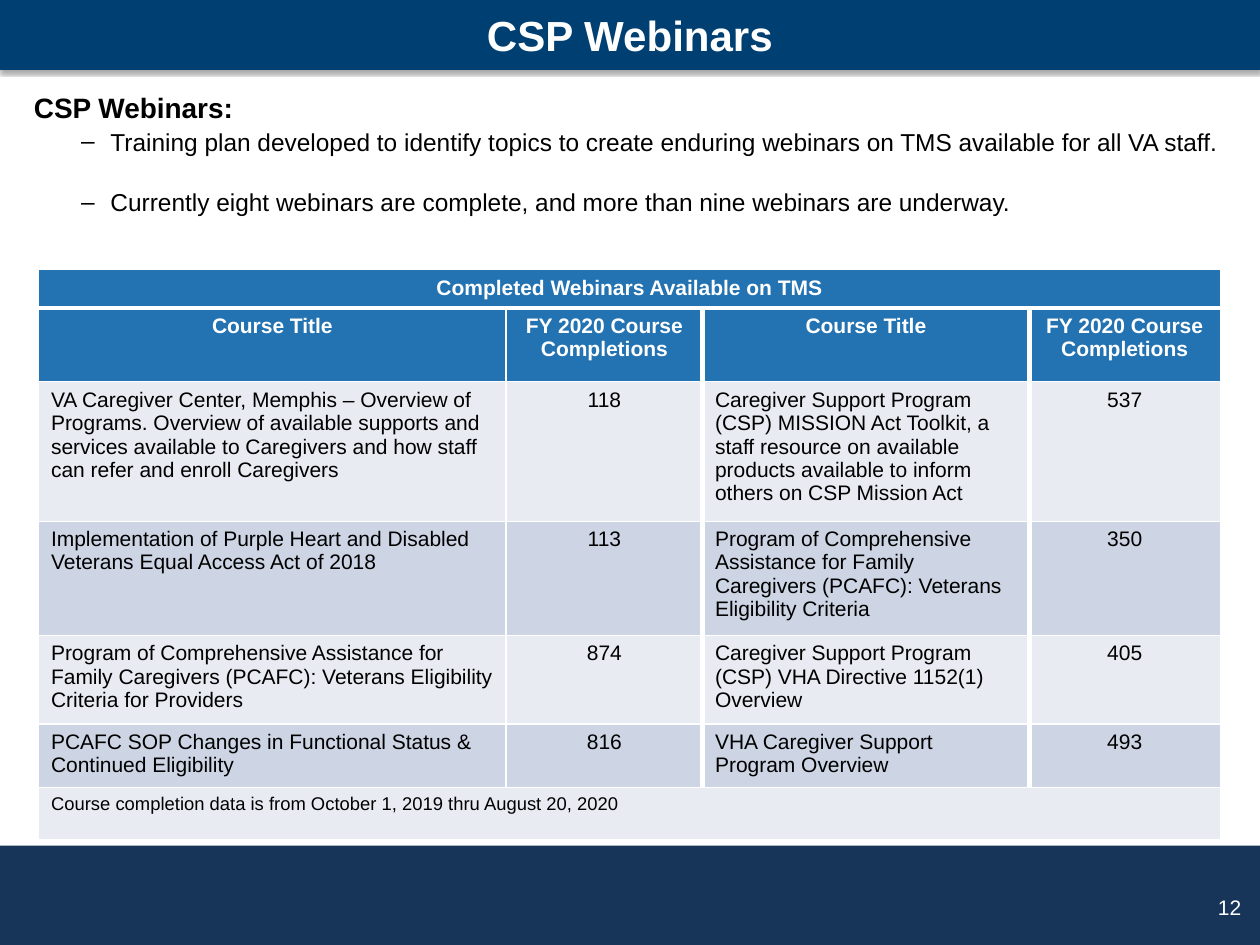
"""Build the CSP Webinars slide with its table of course completions."""
import pptx
import pptx.util
import pptx.dml.color
import pptx.enum.shapes
import pptx.enum.text
import pptx.oxml
import pptx.oxml.ns

TITLE = "CSP Webinars"
HEAD = "CSP Webinars:"
POINTS = [
    ("Training plan developed to identify topics to create enduring webinars on TMS available for all VA staff.", 2),
    ("Currently eight webinars are complete, and more than nine webinars are underway.", 23.5),
]
PAGE = "12"
ROWS = [
    ["Completed Webinars Available on TMS"],
    ["Course Title", "FY 2020 Course Completions"] * 2,
    ["VA Caregiver Center, Memphis – Overview of Programs. Overview of available supports and services "
     "available to Caregivers and how staff can refer and enroll Caregivers", "118",
     "Caregiver Support Program (CSP) MISSION Act Toolkit, a staff resource on available products "
     "available to inform others on CSP Mission Act", "537"],
    ["Implementation of Purple Heart and Disabled Veterans Equal Access Act of 2018", "113",
     "Program of Comprehensive Assistance for Family Caregivers (PCAFC): Veterans Eligibility Criteria", "350"],
    ["Program of Comprehensive Assistance for Family Caregivers (PCAFC): Veterans Eligibility Criteria "
     "for Providers", "874",
     "Caregiver Support Program (CSP) VHA Directive 1152(1) Overview", "405"],
    ["PCAFC SOP Changes in Functional Status & Continued Eligibility", "816",
     "VHA Caregiver Support Program Overview", "493"],
    ["Course completion data is from October 1, 2019 thru August 20, 2020"],
]
WIDTHS = [4.94, 2.08, 3.45, 2.02]
HEIGHTS = [0.39, 0.78, 1.44, 1.18, 0.92, 0.65, 0.55]
WIDE, HIGH = 13.32, 9.99
FOOT = 8.94

THEME = {
    "font": "Arial", "white": "FFFFFF", "black": "000000",
    "top": "003F72", "foot": "173558", "head": "2372B1", "bands": ["E8EBF2", "CDD5E4"],
    "title": 32, "lead": 21.3, "point": 18.6, "cell": 16, "note": 14,
    "thin": 1, "mid": 3, "thick": 4.5,
}

Inches, Pt = pptx.util.Inches, pptx.util.Pt
ALIGN = pptx.enum.text.PP_ALIGN
MIDDLE = pptx.enum.text.MSO_ANCHOR.MIDDLE


def parse(xml):
    space = pptx.oxml.ns.nsdecls("a")
    return pptx.oxml.parse_xml(xml.replace(" ", f" {space} ", 1))


def paint(item, color):
    item.fill.solid()
    item.fill.fore_color.rgb = pptx.dml.color.RGBColor.from_string(color)


def write(para, text, size, color="black", bold=False, align=ALIGN.LEFT, before=0):
    para.alignment = align
    para.space_before = Pt(before)
    run = para.add_run()
    run.text = text
    font = run.font
    font.name, font.size, font.bold = THEME["font"], Pt(size), bold
    font.color.rgb = pptx.dml.color.RGBColor.from_string(THEME[color])


def add_bar(slide, top, height, color):
    bar = slide.shapes.add_shape(pptx.enum.shapes.MSO_SHAPE.RECTANGLE,
                                 0, Inches(top), Inches(WIDE), Inches(height))
    bar.shadow.inherit = False
    paint(bar, color)
    bar.line.fill.background()
    return bar


def add_box(slide, left, top, width, height, anchor=None):
    box = slide.shapes.add_textbox(Inches(left), Inches(top), Inches(width), Inches(height))
    frame = box.text_frame
    frame.word_wrap = True
    frame.vertical_anchor = anchor
    return frame


def add_shade(shape):
    shade = parse('<a:outerShdw blurRad="%d" dist="%d" dir="5400000" algn="t" rotWithShape="0">'
                  '<a:srgbClr val="%s"><a:alpha val="35000"/></a:srgbClr></a:outerShdw>'
                  % (Pt(3.1), Pt(1.8), THEME["black"]))
    shape._element.spPr.find(pptx.oxml.ns.qn("a:effectLst")).append(shade)


def add_points(slide):
    frame = add_box(slide, 0.26, 0.91, 12.81, 1.76)
    write(frame.paragraphs[0], HEAD, THEME["lead"], bold=True)
    for text, before in POINTS:
        para = frame.add_paragraph()
        para.level = 1
        props = para._p.get_or_add_pPr()
        props.set("marL", str(Inches(0.81)))
        props.set("indent", str(Inches(-0.31)))
        props.append(parse('<a:buFont typeface="%s"/>' % THEME["font"]))
        props.append(parse('<a:buChar char="‒"/>'))
        write(para, text, THEME["point"], before=before)


def add_edges(cell, row, col, span):
    left = THEME["thick" if col > 1 else "thin"]
    right = THEME["thick" if span == 1 and col in (1, 2) else "thin"]
    top = THEME["mid" if row == 1 else "thin"]
    bottom = THEME["mid" if row == 0 else "thin"]
    props = cell._tc.get_or_add_tcPr()
    for side, width in zip("LRTB", (left, right, top, bottom)):
        props.append(parse('<a:ln%s w="%d"><a:solidFill><a:srgbClr val="%s"/></a:solidFill></a:ln%s>'
                           % (side, Pt(width), THEME["white"], side)))


def add_grid(slide):
    grid = slide.shapes.add_table(len(ROWS), len(WIDTHS), Inches(0.41), Inches(2.85),
                                  Inches(sum(WIDTHS)), Inches(sum(HEIGHTS))).table
    for col, width in zip(grid.columns, WIDTHS):
        col.width = Inches(width)
    for row, (texts, height) in enumerate(zip(ROWS, HEIGHTS)):
        grid.rows[row].height = Inches(height)
        head = row < 2
        span = len(WIDTHS) // len(texts)
        size = THEME["note" if row == len(ROWS) - 1 else "cell"]
        for col in range(len(WIDTHS)):
            cell = grid.cell(row, col)
            add_edges(cell, row, col, span)
            paint(cell, THEME["head"] if head else THEME["bands"][row % 2])
            cell.margin_left = cell.margin_right = Inches(0.13)
            cell.margin_top = cell.margin_bottom = Inches(0.07)
        if span > 1:
            grid.cell(row, 0).merge(grid.cell(row, span - 1))
        for col, text in enumerate(texts):
            write(grid.cell(row, col).text_frame.paragraphs[0], text, size,
                  color="white" if head else "black", bold=head,
                  align=ALIGN.CENTER if head or col % 2 else ALIGN.LEFT)


def main():
    deck = pptx.Presentation()
    deck.slide_width, deck.slide_height = Inches(WIDE), Inches(HIGH)
    slide = deck.slides.add_slide(deck.slide_layouts[6])
    add_bar(slide, FOOT, HIGH - FOOT, THEME["foot"])
    add_shade(add_bar(slide, 0, 0.74, THEME["top"]))
    page = add_box(slide, 10.11, 9.32, 3.11, 0.53, MIDDLE)
    write(page.paragraphs[0], PAGE, THEME["cell"], color="white", align=ALIGN.RIGHT)
    title = add_box(slide, 0, 0, WIDE, 0.73, MIDDLE)
    write(title.paragraphs[0], TITLE, THEME["title"], color="white", bold=True, align=ALIGN.CENTER)
    add_points(slide)
    add_grid(slide)
    deck.save("out.pptx")


if __name__ == "__main__":
    main()
